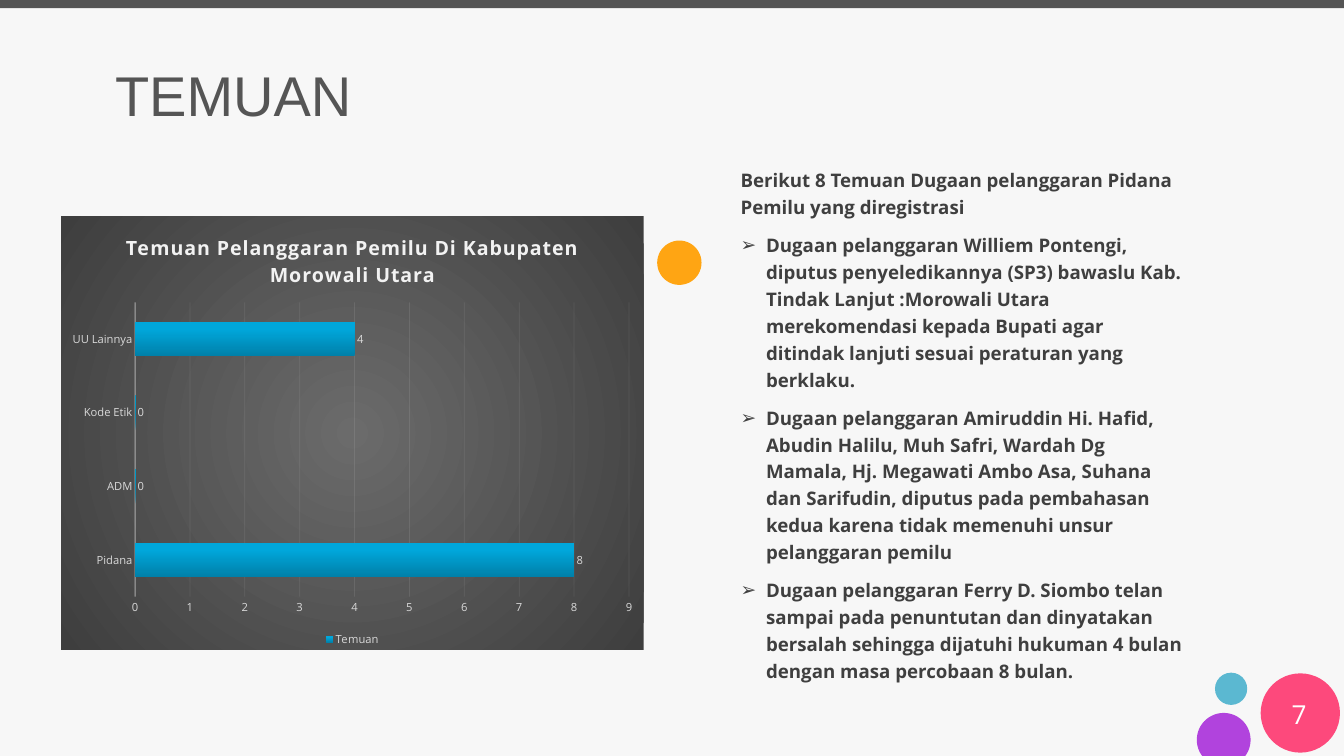
"""Builds the TEMUAN slide: a bar chart of findings beside a bulleted summary."""
from dataclasses import dataclass
from math import asin, cos, pi, sin
from typing import NamedTuple

from lxml import etree
from pptx import Presentation
from pptx import util as u
from pptx.chart.data import CategoryChartData
from pptx.dml.color import RGBColor
from pptx.enum import chart as charts, shapes, text
from pptx.oxml import parse_xml
from pptx.oxml.ns import nsdecls, qn


@dataclass(frozen=True)
class Theme:
    background: str = "F7F7F7"
    bar: str = "545454"
    title: str = "555555"
    body: str = "3F3F3F"
    white: str = "FFFFFF"
    teal: str = "5BB8D1"
    pink: str = "FD497C"
    purple: str = "B143DD"
    orange: str = "FFA513"
    chart_text: str = "D9D9D9"
    chart_line: str = "F2F2F2"
    chart_fill: tuple = ((0, "6B6B6B"), (100, "3E3E3E"))
    series_fill: tuple = ((0, "0080A9"), (80, "00A7DB"), (100, "00A7DC"))
    title_font: str = "Arial"
    font: str = "Open Sans"
    title_size: float = 60
    body_size: float = 20
    number_size: float = 28
    chart_title_size: float = 21
    chart_size: float = 12


class Dot(NamedTuple):
    left: float
    top: float
    size: float
    color: str


class Box(NamedTuple):
    left: float
    top: float
    width: float
    height: float


THEME = Theme()
DOTS = (
    Dot(18.08, 10.01, 0.48, THEME.teal),
    Dot(18.76, 10.02, 1.18, THEME.pink),
    Dot(9.78, 3.58, 0.66, THEME.orange),
)
CHART = Box(0.91, 3.22, 8.67, 6.45)
PLOT = Box(1.1, 1.28, 7.35, 4.38)
INTRO = "Berikut 8 Temuan Dugaan pelanggaran Pidana Pemilu yang diregistrasi"
FINDINGS = (
    "Dugaan pelanggaran Williem Pontengi, diputus penyeledikannya (SP3) bawaslu Kab. "
    "Tindak Lanjut :Morowali Utara merekomendasi kepada Bupati agar ditindak lanjuti "
    "sesuai peraturan yang berklaku.",
    "Dugaan pelanggaran Amiruddin Hi. Hafid, Abudin Halilu, Muh Safri, Wardah Dg Mamala, "
    "Hj. Megawati Ambo Asa, Suhana dan Sarifudin, diputus pada pembahasan kedua karena "
    "tidak memenuhi unsur pelanggaran pemilu",
    "Dugaan pelanggaran Ferry D. Siombo telan sampai pada penuntutan dan dinyatakan "
    "bersalah sehingga dijatuhi hukuman 4 bulan dengan masa percobaan 8 bulan.",
)
COUNTS = {"Pidana": 8, "ADM": 0, "Kode Etik": 0, "UU Lainnya": 4}


def style_font(font, size: float, color: str, name: str = THEME.font, bold: bool = False) -> None:
    font.size, font.name, font.bold = u.Pt(size), name, bold
    font.color.rgb = RGBColor.from_string(color)


def paint(shape, color: str) -> None:
    shape.shadow.inherit = False
    shape.fill.solid()
    shape.fill.fore_color.rgb = RGBColor.from_string(color)
    shape.line.fill.background()


def place(shape, box: Box) -> None:
    shape.left, shape.top, shape.width, shape.height = map(u.Inches, box)


def prepare_frame(shape, anchor):
    frame = shape.text_frame
    frame.word_wrap = True
    frame.auto_size = text.MSO_AUTO_SIZE.NONE
    frame.vertical_anchor = anchor
    frame.margin_left = frame.margin_right = u.Inches(0.18)
    frame.margin_top = frame.margin_bottom = u.Inches(0.09)
    return frame


def add_dot(slide, dot: Dot) -> None:
    box = map(u.Inches, (dot.left, dot.top, dot.size, dot.size))
    paint(slide.shapes.add_shape(shapes.MSO_SHAPE.OVAL, *box), dot.color)


def add_cut_dot(slide, center_x: float, center_y: float, radius: float, floor: float) -> None:
    start = asin((floor - center_y) / radius)
    sweep, steps = pi + 2 * start, 60
    angles = [start - sweep * step / steps for step in range(steps + 1)]
    points = [(u.Inches(center_x + radius * cos(a)), u.Inches(center_y + radius * sin(a))) for a in angles]
    builder = slide.shapes.build_freeform(*points[0])
    builder.add_line_segments(points[1:], close=True)
    paint(builder.convert_to_shape(), THEME.purple)


def add_line_text(shape, words: str, alignment, size: float, color: str, name: str) -> None:
    frame = prepare_frame(shape, text.MSO_ANCHOR.MIDDLE)
    frame.text = words
    paragraph = frame.paragraphs[0]
    paragraph.alignment = alignment
    style_font(paragraph.runs[0].font, size, color, name)


def fill_body(shape) -> None:
    frame = prepare_frame(shape, text.MSO_ANCHOR.TOP)
    frame.text = "\n".join((INTRO, *FINDINGS))
    for index, paragraph in enumerate(frame.paragraphs):
        paragraph.alignment = text.PP_ALIGN.LEFT
        paragraph.line_spacing = 1.2
        paragraph.space_before = u.Pt(12)
        style_font(paragraph.runs[0].font, THEME.body_size, THEME.body, bold=True)
        properties = paragraph._p.get_or_add_pPr()
        indent = u.Inches(0.38) if index else 0
        properties.set("marL", str(indent))
        properties.set("indent", str(-indent))
        if index:
            etree.SubElement(properties, qn("a:buFont"), typeface="Arial")
            etree.SubElement(properties, qn("a:buChar"), char="➢")
        else:
            etree.SubElement(properties, qn("a:buNone"))


def gradient(stops: tuple, direction: str):
    marks = "".join(
        f'<a:gs pos="{position * 1000}"><a:srgbClr val="{color}"/></a:gs>' for position, color in stops
    )
    return parse_xml(f'<a:gradFill {nsdecls("a")}><a:gsLst>{marks}</a:gsLst>{direction}</a:gradFill>')


def style_line(line, width: float, opacity: int) -> None:
    line.width = u.Pt(width)
    line.color.rgb = RGBColor.from_string(THEME.chart_line)
    for color in line._ln.iter(qn("a:srgbClr")):
        etree.SubElement(color, qn("a:alpha"), val=str(opacity * 1000))


def style_chart_area(chart) -> None:
    area = parse_xml(f'<c:spPr {nsdecls("c", "a")}><a:ln><a:noFill/></a:ln></c:spPr>')
    circle = '<a:path path="circle"><a:fillToRect l="50000" t="50000" r="50000" b="50000"/></a:path>'
    area.insert(0, gradient(THEME.chart_fill, circle))
    chart.element.find(qn("c:chart")).addnext(area)
    plot_area = chart.element.find(".//" + qn("c:plotArea"))
    for layout in plot_area.findall(qn("c:layout")):
        plot_area.remove(layout)
    whole = (CHART.width, CHART.height) * 2
    edges = "".join(f'<c:{edge}Mode val="edge"/>' for edge in "xy")
    values = "".join(f'<c:{name} val="{part / total}"/>' for name, part, total in zip("xywh", PLOT, whole))
    plot_area.insert(0, parse_xml(
        f'<c:layout {nsdecls("c")}><c:manualLayout><c:layoutTarget val="inner"/>'
        f"{edges}{values}</c:manualLayout></c:layout>"
    ))


def add_findings_chart(slide) -> None:
    data = CategoryChartData()
    data.categories = list(COUNTS)
    data.add_series("Temuan", list(COUNTS.values()))
    chart = slide.shapes.add_chart(charts.XL_CHART_TYPE.BAR_CLUSTERED, *map(u.Inches, CHART), data).chart
    style_font(chart.font, THEME.chart_size, THEME.chart_text)
    style_chart_area(chart)

    frame = chart.chart_title.text_frame
    frame.text = "Temuan Pelanggaran Pemilu Di Kabupaten Morowali Utara"
    title_font = frame.paragraphs[0].runs[0].font
    style_font(title_font, THEME.chart_title_size, THEME.chart_line, bold=True)
    title_font._element.set("spc", "100")
    chart.chart_title.include_in_layout = False

    chart.has_legend = True
    chart.legend.position = charts.XL_LEGEND_POSITION.BOTTOM
    chart.legend.include_in_layout = False
    for part in (chart.legend, chart.category_axis.tick_labels, chart.value_axis.tick_labels):
        style_font(part.font, THEME.chart_size, THEME.chart_text)
    for axis in (chart.category_axis, chart.value_axis):
        axis.major_tick_mark = axis.minor_tick_mark = charts.XL_TICK_MARK.NONE
    style_line(chart.category_axis.format.line, 1, 54)
    values = chart.value_axis
    values.minimum_scale, values.maximum_scale, values.major_unit = 0, 9, 1
    values.format.line.fill.background()
    style_line(values.major_gridlines.format.line, 0.75, 10)

    plot = chart.plots[0]
    plot.gap_width, plot.overlap, plot.vary_by_categories = 115, -20, False
    plot.has_data_labels = True
    plot.data_labels.show_value = True
    plot.data_labels.position = charts.XL_LABEL_POSITION.OUTSIDE_END
    style_font(plot.data_labels.font, THEME.chart_size, THEME.chart_text)
    series = plot.series[0]
    series.format.fill.solid()
    solid = series._element.find(qn("c:spPr")).find(qn("a:solidFill"))
    solid.getparent().replace(solid, gradient(THEME.series_fill, '<a:lin ang="16200000" scaled="0"/>'))


def main() -> None:
    presentation = Presentation()
    presentation.slide_width, presentation.slide_height = u.Inches(20), u.Inches(11.25)
    slide = presentation.slides.add_slide(presentation.slide_layouts[1])
    slide.background.fill.solid()
    slide.background.fill.fore_color.rgb = RGBColor.from_string(THEME.background)
    for dot in DOTS:
        add_dot(slide, dot)
    add_cut_dot(slide, 18.21, 11.01, 0.4, 11.25)
    bar = slide.shapes.add_shape(shapes.MSO_SHAPE.RECTANGLE, 0, 0, u.Inches(20), u.Inches(0.12))
    paint(bar, THEME.bar)
    title, body = slide.shapes.title, slide.placeholders[1]
    place(title, Box(-1.31, 0.45, 6.72, 1.91))
    add_line_text(title, "TEMUAN", text.PP_ALIGN.RIGHT, THEME.title_size, THEME.title, THEME.title_font)
    place(body, Box(10.84, 2.36, 6.99, 7.52))
    fill_body(body)
    number = slide.shapes.add_textbox(*map(u.Inches, (18.74, 10.32, 1.18, 0.6)))
    add_line_text(number, "7", text.PP_ALIGN.CENTER, THEME.number_size, THEME.white, THEME.font)
    add_findings_chart(slide)
    presentation.save("out.pptx")


if __name__ == "__main__":
    main()
